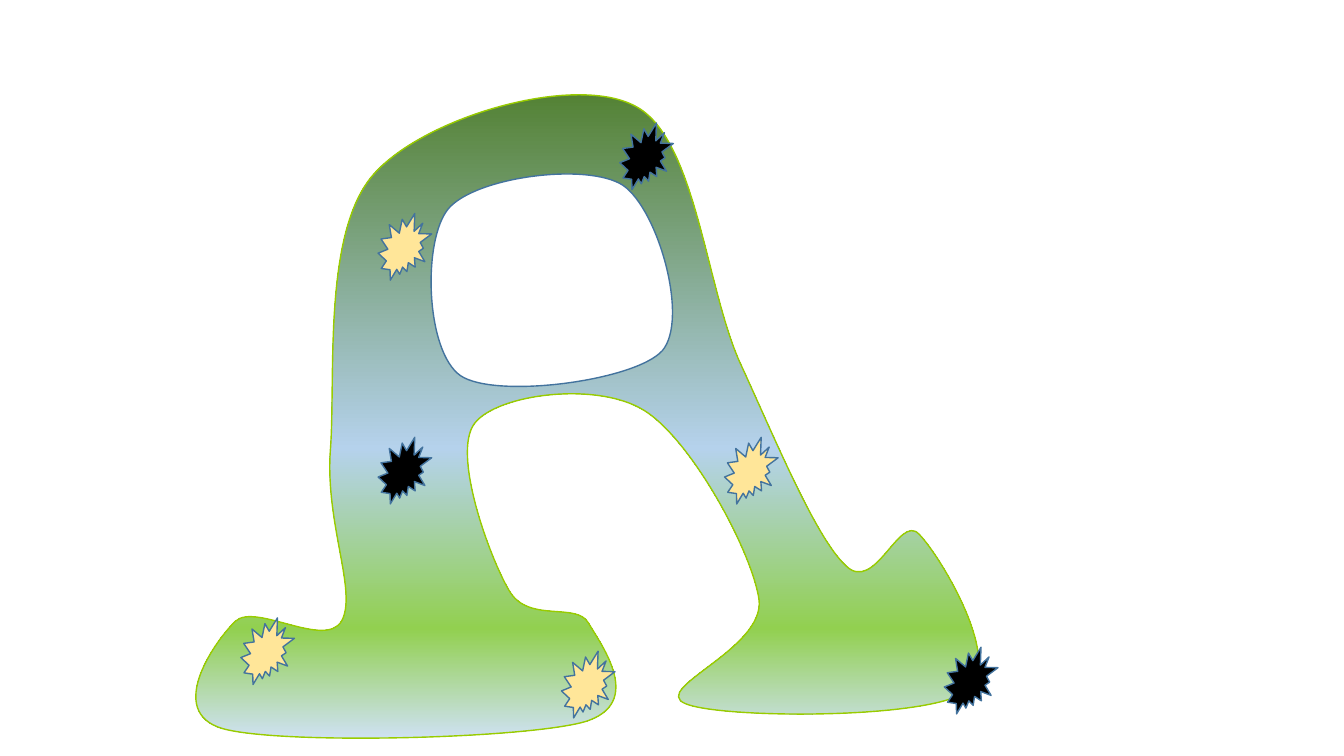
from dataclasses import dataclass

from lxml import etree
from pptx import Presentation
from pptx import util as u
from pptx.dml.color import RGBColor
from pptx.enum import shapes
from pptx.oxml import ns


@dataclass(frozen=True)
class Theme:
    letter_edge: str = "99CC00"
    edge: str = "43739E"
    counter: str = "FFFFFF"
    dark_burst: str = "000000"
    light_burst: str = "FFE699"
    meadow: tuple = ((0, "548235"), (55, "B5D2EC"), (83, "92D050"), (100, "CEE1F2"))
    line_width: int = u.Pt(1)


THEME = Theme()

# All lengths are in centimetres. Each curve: two control points, then its end.
LETTER_FRAME = (4.93, 2.39, 19.74, 16.21)
LETTER_START = (8.33, 11.3)
LETTER_CURVES = [
    ((8.46, 9.45), (8.13, 5.84), (9.42, 4.39)),
    ((10.69, 2.95), (14.45, 1.85), (16, 2.67)),
    ((17.53, 3.45), (17.78, 7.19), (18.64, 9.12)),
    ((19.53, 11.05), (20.55, 13.54), (21.31, 14.25)),
    ((22.05, 14.99), (22.66, 12.93), (23.16, 13.46)),
    ((23.67, 13.97), (25.35, 16.71), (24.36, 17.42)),
    ((23.39, 18.14), (18.14, 18.11), (17.27, 17.73)),
    ((16.38, 17.35), (19.28, 16.36), (19.13, 15.11)),
    ((18.95, 13.89), (17.42, 11.07), (16.23, 10.34)),
    ((15.04, 9.6), (12.52, 9.93), (11.96, 10.67)),
    ((11.38, 11.43), (12.34, 14.05), (12.83, 14.88)),
    ((13.31, 15.72), (14.53, 15.16), (14.83, 15.7)),
    ((15.16, 16.26), (16.26, 17.73), (14.73, 18.19)),
    ((13.18, 18.62), (7.06, 18.77), (5.61, 18.36)),
    ((4.14, 17.93), (5.46, 16.1), (5.94, 15.65)),
    ((6.45, 15.19), (8.2, 16.36), (8.61, 15.65)),
    ((9.02, 14.91), (8.18, 13.18), LETTER_START),
]
COUNTER_FRAME = (10.87, 4.39, 6.1, 5.36)
COUNTER_START = (11.61, 9.47)
COUNTER_CURVES = [
    ((10.72, 8.86), (10.64, 6.05), (11.3, 5.26)),
    ((11.99, 4.45), (14.81, 4.09), (15.7, 4.67)),
    ((16.59, 5.28), (17.37, 8.05), (16.69, 8.84)),
    ((16, 9.6), (12.5, 10.06), COUNTER_START),
]
BURST_SIZE = (1.35, 1.68)
BURSTS = [
    ((9.53, 11.02), THEME.dark_burst),
    ((15.62, 3.1), THEME.dark_burst),
    ((9.53, 5.38), THEME.light_burst),
    ((14.15, 16.41), THEME.light_burst),
    ((18.26, 11.02), THEME.light_burst),
    ((6.07, 15.57), THEME.light_burst),
    ((23.8, 16.31), THEME.dark_burst),
]


def set_format(target, values):
    for name, value in values.items():
        setattr(target, name, value)


def fill_solid(shape, color):
    shape.fill.solid()
    shape.fill.fore_color.rgb = RGBColor.from_string(color)


def fill_gradient(shape, stops):
    """Fill from top to bottom with (percent, colour) stops."""
    shape.fill.gradient()
    shape.fill.gradient_angle = 270
    stop_list = shape.element.spPr.find(".//" + ns.qn("a:gsLst"))
    for stop in list(stop_list):
        stop_list.remove(stop)
    for percent, color in stops:
        stop = etree.SubElement(stop_list, ns.qn("a:gs"), pos=str(percent * 1000))
        etree.SubElement(stop, ns.qn("a:srgbClr"), val=color)


def set_outline(shape, color):
    shape.shadow.inherit = False
    set_format(shape.line, {"width": THEME.line_width})
    set_format(shape.line.color, {"rgb": RGBColor.from_string(color)})


def add_curved_outline(group, frame, start, curves, edge):
    """Draw a closed outline of Bézier curves whose bounds are frame."""
    left, top, width, height = (u.Cm(length) for length in frame)
    right, bottom = left + width, top + height
    builder = group.shapes.build_freeform(left, top)
    builder.add_line_segments([(right, top), (right, bottom), (left, bottom)])
    shape = builder.convert_to_shape()

    outline = shape.element.spPr.find(".//" + ns.qn("a:path"))
    for step in list(outline):
        outline.remove(step)
    steps = [("a:moveTo", [start])] + [("a:cubicBezTo", curve) for curve in curves]
    for tag, points in steps:
        step = etree.SubElement(outline, ns.qn(tag))
        for x, y in points:
            etree.SubElement(step, ns.qn("a:pt"),
                             x=str(u.Cm(x) - left), y=str(u.Cm(y) - top))
    etree.SubElement(outline, ns.qn("a:close"))
    set_outline(shape, edge)
    return shape


def add_burst(group, corner, color):
    burst = group.shapes.add_shape(
        shapes.MSO_SHAPE.EXPLOSION2,
        *(u.Cm(length) for length in corner + BURST_SIZE))
    fill_solid(burst, color)
    set_outline(burst, THEME.edge)


def main():
    deck = Presentation()
    set_format(deck, {"slide_width": u.Cm(33.87), "slide_height": u.Cm(19.05)})
    slide = deck.slides.add_slide(deck.slide_layouts[6])
    decorated_letter = slide.shapes.add_group_shape()

    letter = add_curved_outline(decorated_letter, LETTER_FRAME, LETTER_START,
                                LETTER_CURVES, THEME.letter_edge)
    fill_gradient(letter, THEME.meadow)
    counter = add_curved_outline(decorated_letter, COUNTER_FRAME, COUNTER_START,
                                 COUNTER_CURVES, THEME.edge)
    fill_solid(counter, THEME.counter)
    for corner, color in BURSTS:
        add_burst(decorated_letter, corner, color)

    deck.save("out.pptx")


if __name__ == "__main__":
    main()
